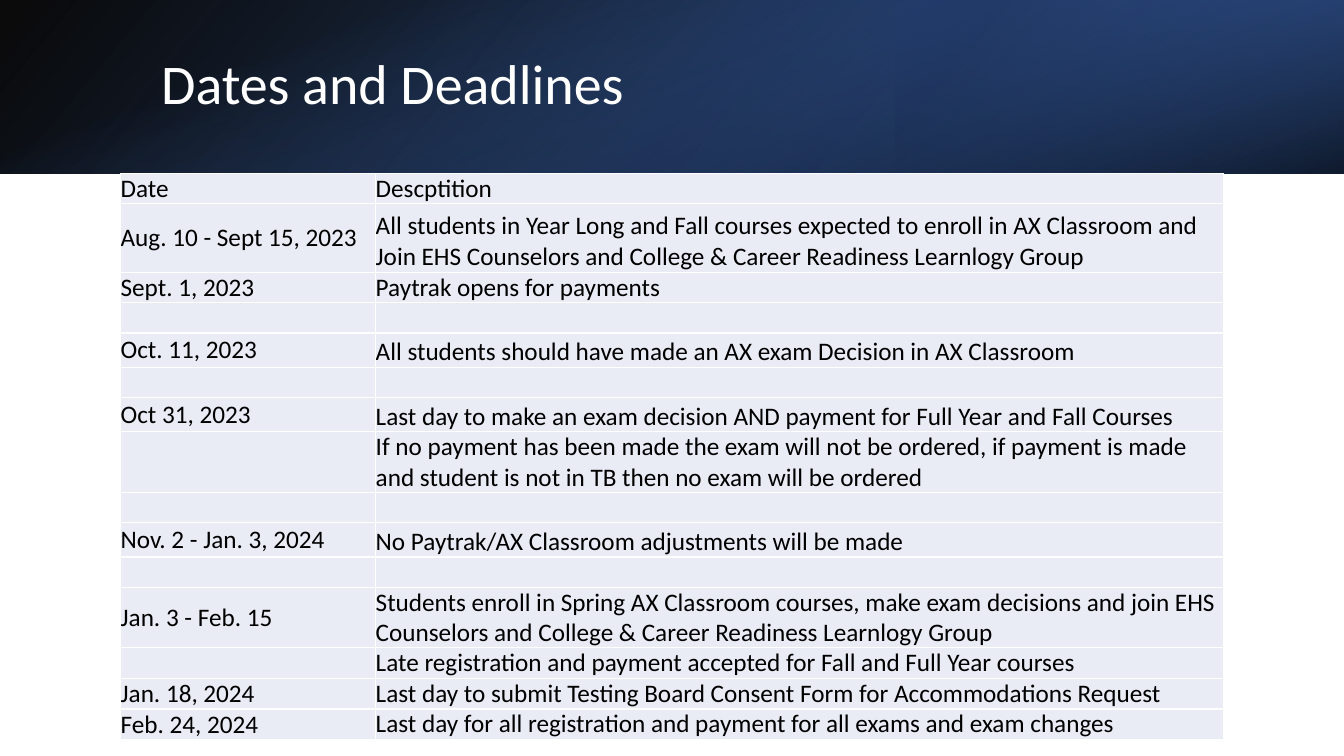
from lxml.etree import SubElement
from pptx import Presentation
from pptx.dml.color import RGBColor
from pptx.enum.shapes import MSO_SHAPE
from pptx.enum.text import MSO_ANCHOR
from pptx.oxml.ns import qn
from pptx.util import Pt

WHITE = RGBColor(0xFF, 0xFF, 0xFF)
BLACK = RGBColor(0, 0, 0)
BLUE = RGBColor(0x44, 0x72, 0xC4)
MID_BLUE = RGBColor(0x2F, 0x55, 0x97)
NAVY = RGBColor(0x20, 0x38, 0x64)
PALE = RGBColor(0xE9, 0xEB, 0xF5)
FONT = "Calibri"

WIDTH, HEIGHT, BANNER = 960, 540, 124
TITLE = "Dates and Deadlines"

# box, rotation, flipped, angle, stops of (position, colour, opacity %)
BANNER_LAYERS = [
    ((0, 0, WIDTH, BANNER), 0, True, 140,
     [(0, BLACK, 96), (1, MID_BLUE, 100)]),
    ((640, 0, 320, BANNER), 180, True, 320,
     [(0.19, NAVY, 68), (1, BLUE, 79)]),
    (((WIDTH - BANNER) / 2, (BANNER - WIDTH) / 2, BANNER, WIDTH), 90, False, 340,
     [(0.23, BLUE, 0), (0.99, BLACK, 74)]),
]

COLUMNS = [182.2, 605.6]
# row height, date, description
DEADLINES = [
    (20.2, "Date", "Descptition"),
    (49, "Aug. 10 - Sept 15, 2023",
     "All students in Year Long and Fall courses expected to enroll in AX Classroom and "
     "Join EHS Counselors and College & Career Readiness Learnlogy Group"),
    (20.2, "Sept. 1, 2023", "Paytrak opens for payments"),
    (20.2, "", ""),
    (24.5, "Oct. 11, 2023",
     "All students should have made an AX exam Decision in AX Classroom"),
    (20.2, "", ""),
    (24.5, "Oct 31, 2023",
     "Last day to make an exam decision AND payment for Full Year and Fall Courses"),
    (40.3, "",
     "If no payment has been made the exam will not be ordered, if payment is made "
     "and student is not in TB then no exam will be ordered"),
    (20.2, "", ""),
    (24.5, "Nov. 2 - Jan. 3, 2024", "No Paytrak/AX Classroom adjustments will be made"),
    (20.2, "", ""),
    (40.3, "Jan. 3 - Feb. 15",
     "Students enroll in Spring AX Classroom courses, make exam decisions and join EHS "
     "Counselors and College & Career Readiness Learnlogy Group"),
    (21.9, "", "Late registration and payment accepted for Fall and Full Year courses"),
    (21.9, "Jan. 18, 2024",
     "Last day to submit Testing Board Consent Form for Accommodations Request"),
    (21.9, "Feb. 24, 2024",
     "Last day for all registration and payment for all exams and exam changes"),
]


def style(p, size, color):
    p.font.name, p.font.size = FONT, Pt(size)
    p.font.color.rgb = color
    for r in p.runs:
        r.font.name, r.font.size = FONT, Pt(size)
        r.font.color.rgb = color


def add_layer(s, box, rotation, flipped, angle, stops):
    """Add a banner rectangle with a two-stop translucent gradient."""
    sp = s.shapes.add_shape(MSO_SHAPE.RECTANGLE, *map(Pt, box))
    sp.shadow.inherit = False
    sp.line.fill.background()
    sp.rotation = rotation
    sp_pr = sp._element.spPr
    if flipped:
        sp_pr.find(qn("a:xfrm")).set("flipH", "1")
    sp.fill.gradient()
    sp.fill.gradient_angle = 360 - angle
    for stop, (position, color, _) in zip(sp.fill.gradient_stops, stops):
        stop.position = position
        stop.color.rgb = color
    for clr, (_, _, opacity) in zip(sp_pr.iter(qn("a:srgbClr")), stops):
        SubElement(clr, qn("a:alpha"), val=str(opacity * 1000))


def add_borders(cell):
    tc_pr = cell._tc.get_or_add_tcPr()
    for i, side in enumerate(("lnL", "lnR", "lnT", "lnB")):
        ln = tc_pr.makeelement(qn(f"a:{side}"), {"w": str(Pt(1))})
        tc_pr.insert(i, ln)
        fill = SubElement(ln, qn("a:solidFill"))
        SubElement(fill, qn("a:srgbClr"), val=str(WHITE))


def add_deadlines(s):
    total = sum(row[0] for row in DEADLINES)
    table = s.shapes.add_table(len(DEADLINES), len(COLUMNS), Pt(86.2), Pt(BANNER),
                               Pt(sum(COLUMNS)), Pt(total)).table
    table.first_row = table.horz_banding = False
    for column, width in zip(table.columns, COLUMNS):
        column.width = Pt(width)
    for row, (height, *texts) in zip(table.rows, DEADLINES):
        row.height = Pt(height)
        for cell, text, anchor in zip(row.cells, texts,
                                      (MSO_ANCHOR.MIDDLE, MSO_ANCHOR.BOTTOM)):
            cell.margin_left = cell.margin_right = 0
            cell.margin_top = cell.margin_bottom = 0
            cell.vertical_anchor = anchor
            cell.fill.solid()
            cell.fill.fore_color.rgb = PALE
            add_borders(cell)
            cell.text_frame.text = text
            style(cell.text_frame.paragraphs[0], 18, BLACK)


def main():
    prs = Presentation()
    prs.slide_width, prs.slide_height = Pt(WIDTH), Pt(HEIGHT)
    s = prs.slides.add_slide(prs.slide_layouts[6])
    for layer in BANNER_LAYERS:
        add_layer(s, *layer)

    tf = s.shapes.add_textbox(Pt(108), Pt(27.4), Pt(790.6), Pt(69)).text_frame
    tf.word_wrap = True
    tf.vertical_anchor = MSO_ANCHOR.MIDDLE
    tf.text = TITLE
    tf.paragraphs[0].line_spacing = 0.9
    style(tf.paragraphs[0], 40, WHITE)

    add_deadlines(s)
    prs.save("out.pptx")


if __name__ == "__main__":
    main()
